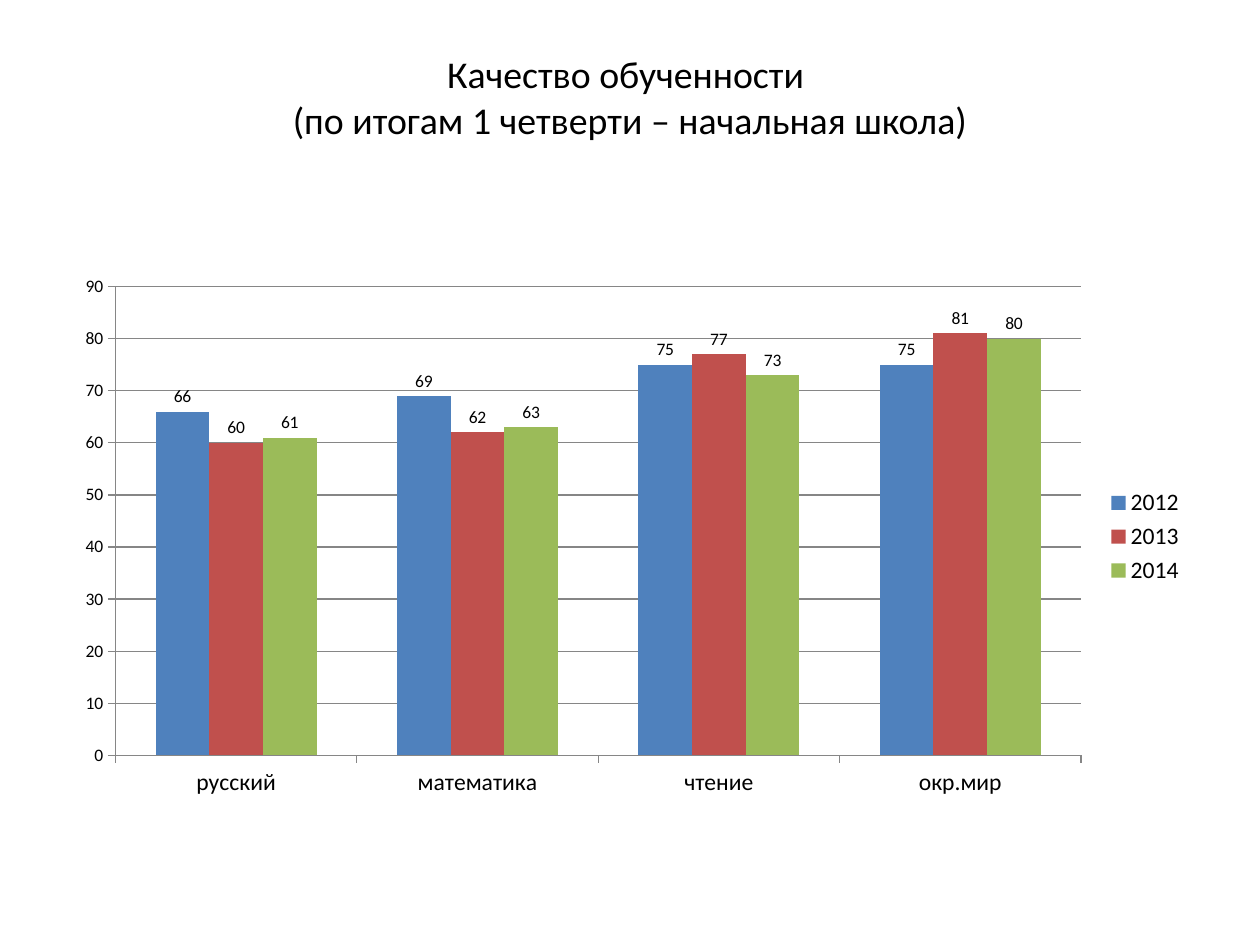
"""Build a slide with a column chart of primary school learning quality."""
from dataclasses import dataclass

from pptx import Presentation
from pptx.chart.data import CategoryChartData
from pptx.dml.color import RGBColor
from pptx.enum.chart import XL_CHART_TYPE, XL_LABEL_POSITION, XL_LEGEND_POSITION, XL_TICK_MARK
from pptx.enum.text import MSO_ANCHOR, MSO_AUTO_SIZE, PP_ALIGN
from pptx.util import Inches, Pt


@dataclass(frozen=True)
class Theme:
    font: str = "Calibri"
    text: RGBColor = RGBColor(0x00, 0x00, 0x00)
    grid: RGBColor = RGBColor(0x86, 0x86, 0x86)
    series: tuple = (
        RGBColor(0x4F, 0x81, 0xBD),
        RGBColor(0xC0, 0x50, 0x4D),
        RGBColor(0x9B, 0xBB, 0x59),
    )
    title_size: Pt = Pt(21.6)
    chart_size: Pt = Pt(10)
    category_size: Pt = Pt(13.5)


def format_font(font, size):
    font.name = theme.font
    font.size = size
    font.color.rgb = theme.text


theme = Theme()
subjects = ("русский", "математика", "чтение", "окр.мир")
quality_by_year = {
    "2012": (66, 69, 75, 75),
    "2013": (60, 62, 77, 81),
    "2014": (61, 63, 73, 80),
}

presentation = Presentation()
presentation.slide_width = Inches(10)
presentation.slide_height = Inches(7.5)
slide = presentation.slides.add_slide(presentation.slide_layouts[5])

title = slide.shapes.title
title.left, title.top = Inches(0.5), Inches(0.3)
title.width, title.height = Inches(9), Inches(1.25)
title_frame = title.text_frame
title_frame.text = "Качество обученности \v(по итогам 1 четверти – начальная школа)"
title_frame.auto_size = MSO_AUTO_SIZE.NONE
title_frame.word_wrap = True
title_frame.vertical_anchor = MSO_ANCHOR.MIDDLE
title_frame.margin_bottom = Inches(0.37)
paragraph = title_frame.paragraphs[0]
paragraph.alignment = PP_ALIGN.CENTER
format_font(paragraph.font, theme.title_size)

chart_data = CategoryChartData()
chart_data.categories = subjects
for year, values in quality_by_year.items():
    chart_data.add_series(year, values)

chart = slide.shapes.add_chart(
    XL_CHART_TYPE.COLUMN_CLUSTERED,
    Inches(0.5), Inches(2.11), Inches(9), Inches(4.3), chart_data,
).chart
chart.has_title = False
format_font(chart.font, theme.chart_size)

chart.has_legend = True
chart.legend.position = XL_LEGEND_POSITION.RIGHT
chart.legend.include_in_layout = False
format_font(chart.legend.font, theme.category_size)

for axis, size in (
    (chart.category_axis, theme.category_size),
    (chart.value_axis, theme.chart_size),
):
    axis.major_tick_mark = XL_TICK_MARK.OUTSIDE
    axis.minor_tick_mark = XL_TICK_MARK.NONE
    axis.format.line.color.rgb = theme.grid
    format_font(axis.tick_labels.font, size)

value_axis = chart.value_axis
value_axis.minimum_scale = 0
value_axis.maximum_scale = 90
value_axis.major_unit = 10
value_axis.has_major_gridlines = True
value_axis.major_gridlines.format.line.color.rgb = theme.grid

plot = chart.plots[0]
plot.gap_width = 150
plot.overlap = 0
plot.vary_by_categories = False
for series, color in zip(plot.series, theme.series):
    series.format.fill.solid()
    series.format.fill.fore_color.rgb = color
    series.invert_if_negative = False
    labels = series.data_labels
    labels.show_value = True
    labels.position = XL_LABEL_POSITION.OUTSIDE_END
    format_font(labels.font, theme.chart_size)

presentation.save("out.pptx")
